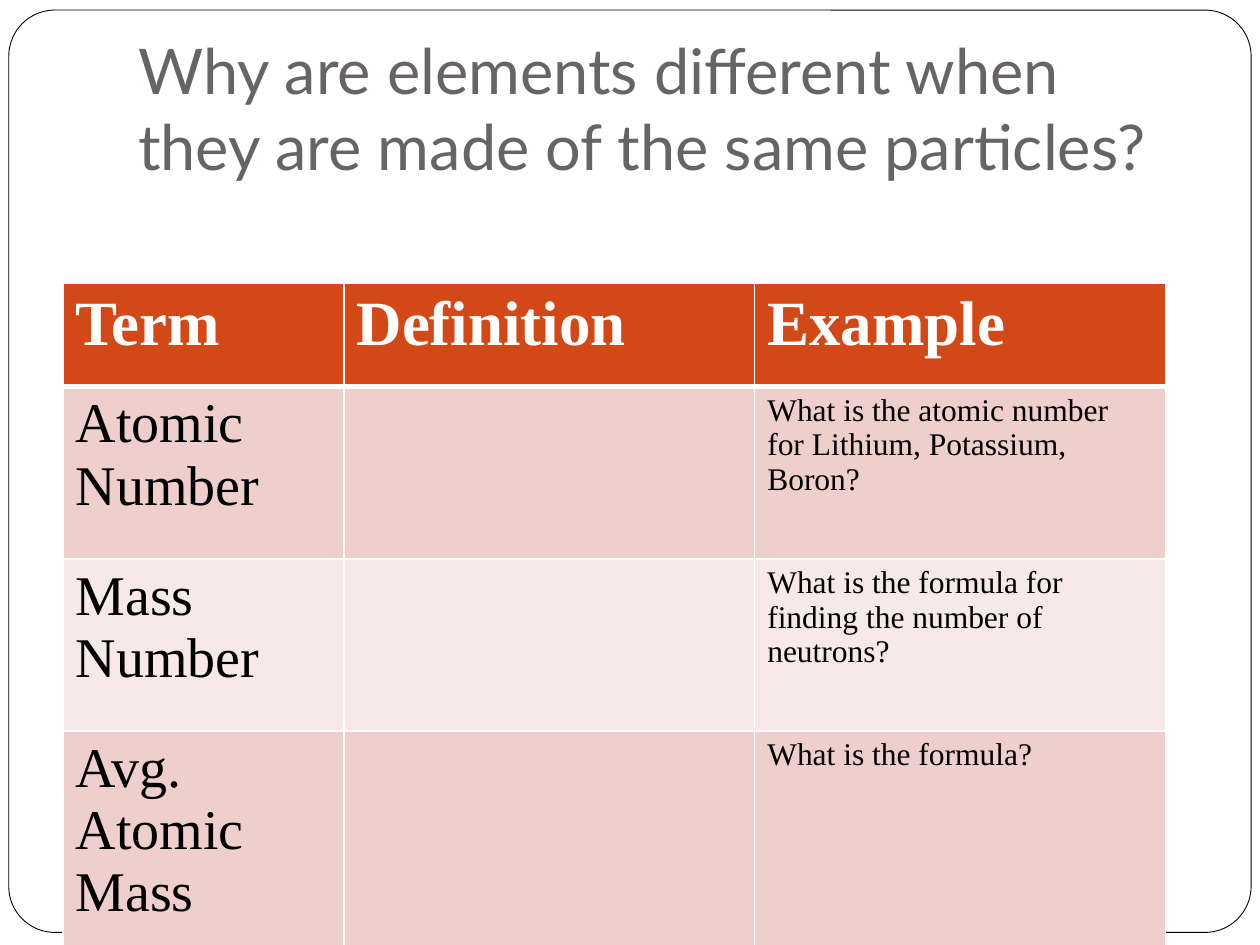
import pptx
import pptx.dml.color
import pptx.enum.shapes
import pptx.enum.text
import pptx.oxml
import pptx.oxml.ns
import pptx.util
from pptx.util import Inches

COLORS = {
    "white": "FFFFFF",
    "black": "000000",
    "title": "696464",
    "header": "D34817",
    "band_dark": "EFCFCC",
    "band_light": "F7E9E8",
}
ROWS = [
    ("Term", "Definition", "Example"),
    ("Atomic Number", "", "What is the atomic number for Lithium, Potassium, Boron?"),
    ("Mass Number", "", "What is the formula for finding the number of neutrons?"),
    ("Avg. Atomic Mass", "", "What is the formula?"),
]
COLUMN_WIDTHS = (2.23, 3.26, 3.26)
ROW_HEIGHTS = (0.82, 1.37, 1.37, 1.37)
BODY_SIZES = (32, 32, 18)


def rgb(name):
    return pptx.dml.color.RGBColor.from_string(COLORS[name])


def write_text(tf, text, font="Times New Roman", size=18, color="black", bold=False):
    p = tf.paragraphs[0]
    p.alignment = pptx.enum.text.PP_ALIGN.LEFT
    r = p.add_run()
    r.text = text
    r.font.name = font
    r.font.size = pptx.util.Pt(size)
    r.font.bold = bold
    r.font.color.rgb = rgb(color)


def set_borders(cell, widths):
    tcPr = cell._tc.get_or_add_tcPr()
    for i, (side, width) in enumerate(widths.items()):
        ln = pptx.oxml.parse_xml(
            f'<a:ln{side} {pptx.oxml.ns.nsdecls("a")} w="{pptx.util.Pt(width)}">'
            f'<a:solidFill><a:srgbClr val="{COLORS["white"]}"/></a:solidFill>'
            f'</a:ln{side}>'
        )
        tcPr.insert(i, ln)


def add_frame(s, left, top, width, height):
    sp = s.shapes.add_shape(
        pptx.enum.shapes.MSO_SHAPE.ROUNDED_RECTANGLE,
        Inches(left), Inches(top), Inches(width), Inches(height),
    )
    sp.adjustments[0] = 0.05
    sp.shadow.inherit = False
    sp.fill.solid()
    sp.fill.fore_color.rgb = rgb("white")
    sp.line.color.rgb = rgb("black")
    sp.line.width = pptx.util.Pt(0.5)


def add_title(s, left, top, width, height):
    sp = s.shapes.add_textbox(Inches(left), Inches(top), Inches(width), Inches(height))
    tf = sp.text_frame
    tf.word_wrap = True
    tf.vertical_anchor = pptx.enum.text.MSO_ANCHOR.BOTTOM
    tf.margin_bottom = Inches(0.1)
    write_text(tf, "Why are elements different when they are made of the same particles?",
               font="Lato", size=36, color="title")


def add_terms_table(s, left, top, width, height):
    table = s.shapes.add_table(
        len(ROWS), len(COLUMN_WIDTHS),
        Inches(left), Inches(top), Inches(width), Inches(height),
    ).table
    for column, share in zip(table.columns, COLUMN_WIDTHS):
        column.width = Inches(width * share / sum(COLUMN_WIDTHS))
    for row, share in zip(table.rows, ROW_HEIGHTS):
        row.height = Inches(height * share / sum(ROW_HEIGHTS))
    for i, texts in enumerate(ROWS):
        header = i == 0
        fill = "header" if header else "band_dark" if i % 2 else "band_light"
        for j, text in enumerate(texts):
            cell = table.cell(i, j)
            cell.fill.solid()
            cell.fill.fore_color.rgb = rgb(fill)
            set_borders(cell, {"L": 1, "R": 1, "T": 3 if i == 1 else 1, "B": 3 if header else 1})
            if text:
                write_text(cell.text_frame, text, size=36 if header else BODY_SIZES[j],
                           color="white" if header else "black", bold=header)


def main():
    prs = pptx.Presentation()
    prs.slide_width = Inches(10)
    prs.slide_height = Inches(7.5)
    s = prs.slides.add_slide(prs.slide_layouts[6])
    add_frame(s, 0.07, 0.08, 9.86, 7.32)
    add_title(s, 1, 0.3, 8.5, 1.25)
    add_terms_table(s, 0.5, 2.25, 8.75, 4.92)
    prs.save("out.pptx")


if __name__ == "__main__":
    main()
